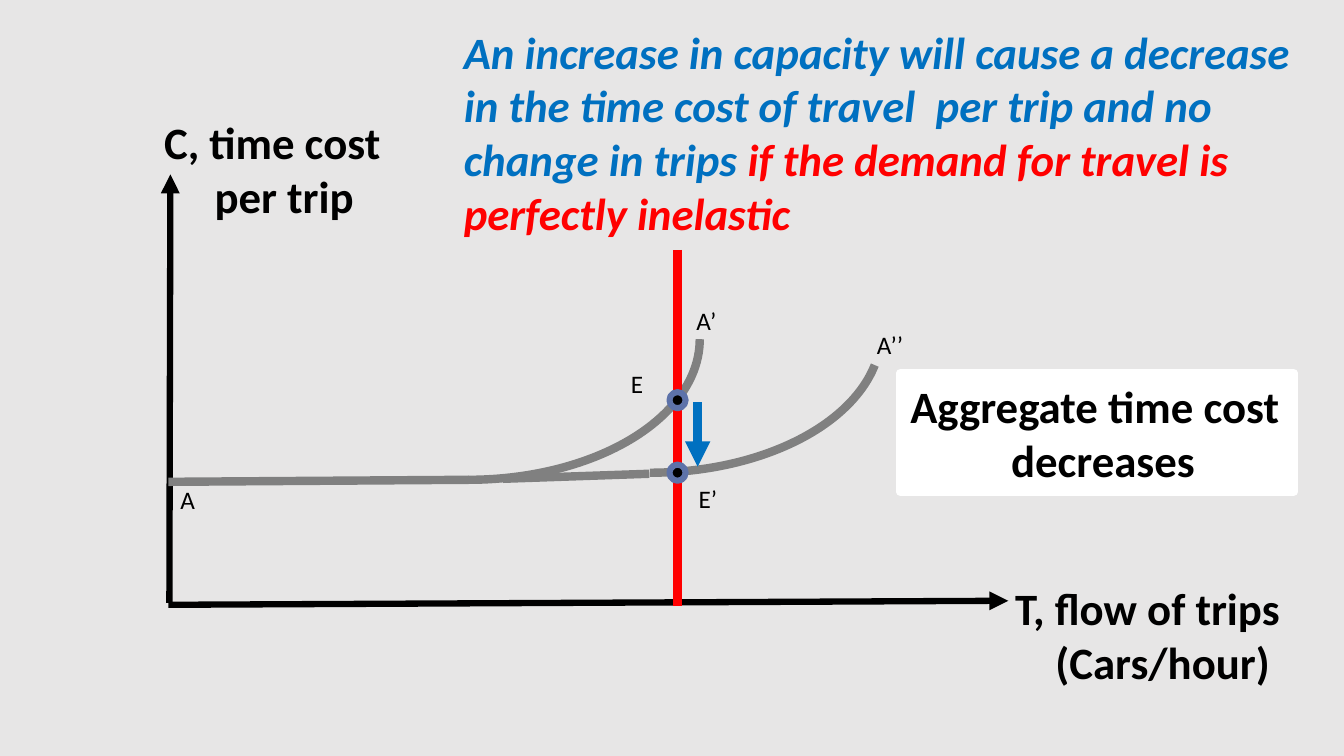
from dataclasses import dataclass

from lxml.etree import SubElement
from pptx import Presentation
from pptx.dml.color import RGBColor
from pptx.enum.shapes import MSO_CONNECTOR as Connector, MSO_SHAPE as Preset
from pptx.enum.text import MSO_ANCHOR as Anchor, MSO_AUTO_SIZE as AutoSize, PP_ALIGN as Align
from pptx.oxml.ns import qn
from pptx.util import Inches, Pt


@dataclass(frozen=True)
class Theme:
    font: str = "Calibri"
    background: str = "E7E6E6"
    ink: str = "000000"
    curve: str = "808080"
    demand: str = "FF0000"
    change: str = "0070C0"
    ring: str = "5D72A9"
    panel: str = "FFFFFF"
    large: float = 32
    small: float = 18
    axis_width: float = 4.5
    ring_width: float = 4.33
    line_width: float = 6


@dataclass(frozen=True)
class Plot:
    """Box of the diagram; its points count inches right of and above the origin."""
    left: float
    top: float
    width: float
    height: float

    def point(self, x, y):
        return Inches(self.left + x), Inches(self.top + self.height - y)


THEME = Theme()
SLIDE_WIDTH, SLIDE_HEIGHT = 13.33, 7.5
DEMAND_X, COST_BEFORE, COST_AFTER = 5.04, 2.01, 1.29


def color(value):
    return RGBColor.from_string(value)


def format_run(run, size, value, bold=False, italic=False):
    font = run.font
    font.name, font.size, font.bold, font.italic = THEME.font, Pt(size), bold, italic
    font.color.rgb = color(value)


def write_lines(text_frame, lines, size, bold=False, indent=0):
    """Fills the frame; every line after the first is indented by the given inches."""
    text_frame.text = "\n".join(lines)
    text_frame.word_wrap = False
    for number, paragraph in enumerate(text_frame.paragraphs):
        paragraph.alignment = Align.LEFT
        if number and indent:
            paragraph._p.get_or_add_pPr().set("marL", str(Inches(indent)))
        format_run(paragraph.runs[0], size, THEME.ink, bold)


def add_label(slide, plot, lines, corner, size, type_size, bold=False, indent=0):
    box = slide.shapes.add_textbox(*plot.point(*corner), *map(Inches, size))
    write_lines(box.text_frame, lines, type_size, bold, indent)


def add_line(slide, plot, start, end, value, width, arrow=False):
    connector = slide.shapes.add_connector(
        Connector.STRAIGHT, *plot.point(*start), *plot.point(*end))
    connector.line.color.rgb = color(value)
    connector.line.width = Pt(width)
    if arrow:
        SubElement(connector.line._get_or_add_ln(), qn("a:tailEnd"), type="triangle")
    SubElement(connector._element.spPr, qn("a:effectLst"))


def add_preset(slide, plot, preset, corner, size, line, line_width, fill=None):
    shape = slide.shapes.add_shape(preset, *plot.point(*corner), *map(Inches, size))
    shape.shadow.inherit = False
    shape.line.color.rgb = color(line)
    shape.line.width = Pt(line_width)
    if fill:
        shape.fill.solid()
        shape.fill.fore_color.rgb = color(fill)
    else:
        shape.fill.background()
    return shape


def add_headline(slide, left, top, width, height):
    title = slide.shapes.title
    title.left, title.top, title.width, title.height = map(Inches, (left, top, width, height))
    frame = title.text_frame
    frame.word_wrap, frame.auto_size = True, AutoSize.NONE
    frame.vertical_anchor = Anchor.TOP
    paragraph = frame.paragraphs[0]
    paragraph.alignment = Align.LEFT
    for text, value in (
        ("An increase in capacity will cause a decrease in the time cost of travel  "
         "per trip and no change in trips ", THEME.change),
        ("if the demand for travel is perfectly inelastic", THEME.demand),
    ):
        run = paragraph.add_run()
        run.text = text
        format_run(run, THEME.large, value, bold=True, italic=True)


def add_axes(slide, plot):
    for start, end in (((0, 0), (0.01, plot.height)),
                       ((-0.01, -0.02), (plot.width, 0.02))):
        add_line(slide, plot, start, end, THEME.ink, THEME.axis_width, arrow=True)
    add_label(slide, plot, ("C, time cost", "per trip"), (-0.15, 4.89), (2.95, 1.18),
              THEME.large, bold=True, indent=0.5)
    add_label(slide, plot, ("T, flow of trips", "(Cars/hour)"), (8.29, 0.27), (2.86, 1.18),
              THEME.large, bold=True, indent=0.4)


def add_cost_curves(slide, plot):
    arc_size = (4.59, 2.79)
    for start, end in (((-0.01, 1.2), (2.97, 1.22)), ((3.31, 1.23), (4.76, 1.28))):
        add_line(slide, plot, start, end, THEME.curve, THEME.line_width)
    for corner, angles in (((0.67, 4.01), None), ((2.47, 4.08), (162, 210.99))):
        arc = add_preset(slide, plot, Preset.ARC, corner, arc_size,
                         THEME.curve, THEME.line_width)
        arc._element.spPr.xfrm.set("flipV", "1")
        if angles:
            arc.adjustments[0], arc.adjustments[1] = angles


def add_equilibria(slide, plot):
    """Draws the demand line, the two points on it and the fall in cost."""
    add_line(slide, plot, (DEMAND_X, 3.5), (DEMAND_X, -0.03), THEME.demand, THEME.line_width)
    add_line(slide, plot, (DEMAND_X + 0.2, COST_BEFORE - 0.02),
             (DEMAND_X + 0.2, COST_AFTER + 0.06), THEME.change, THEME.line_width, arrow=True)
    dot = 0.16
    for cost in (COST_BEFORE, COST_AFTER):
        add_preset(slide, plot, Preset.FLOWCHART_CONNECTOR,
                   (DEMAND_X - dot / 2, cost + dot / 2), (dot, dot),
                   THEME.ring, THEME.ring_width, THEME.ink)


def add_point_labels(slide, plot):
    for text, corner, width in (
        ("A", (0.01, 1.22), 0.35),
        ("E’", (5.15, 1.23), 0.4),
        ("E", (4.48, 2.37), 0.32),
        ("A’", (5.13, 3), 0.4),
        ("A’’", (6.92, 2.76), 0.46),
    ):
        add_label(slide, plot, (text,), corner, (width, 0.4), THEME.small)


def add_conclusion(slide, plot):
    panel = add_preset(slide, plot, Preset.RECTANGLE, (7.25, 2.28), (3.9, 1.18),
                       THEME.panel, THEME.line_width, THEME.panel)
    write_lines(panel.text_frame, ("Aggregate time cost", "decreases"),
                THEME.large, bold=True, indent=1)


def main():
    presentation = Presentation()
    presentation.slide_width = Inches(SLIDE_WIDTH)
    presentation.slide_height = Inches(SLIDE_HEIGHT)
    slide = presentation.slides.add_slide(presentation.slide_layouts.get_by_name("Title Only"))
    slide.background.fill.solid()
    slide.background.fill.fore_color.rgb = color(THEME.background)

    add_headline(slide, 4.5, 0.19, 8.46, 3.06)
    plot = Plot(left=1.68, top=1.73, width=8.32, height=4.25)
    for add_region in (add_axes, add_cost_curves, add_equilibria,
                       add_point_labels, add_conclusion):
        add_region(slide, plot)
    presentation.save("out.pptx")


if __name__ == "__main__":
    main()
